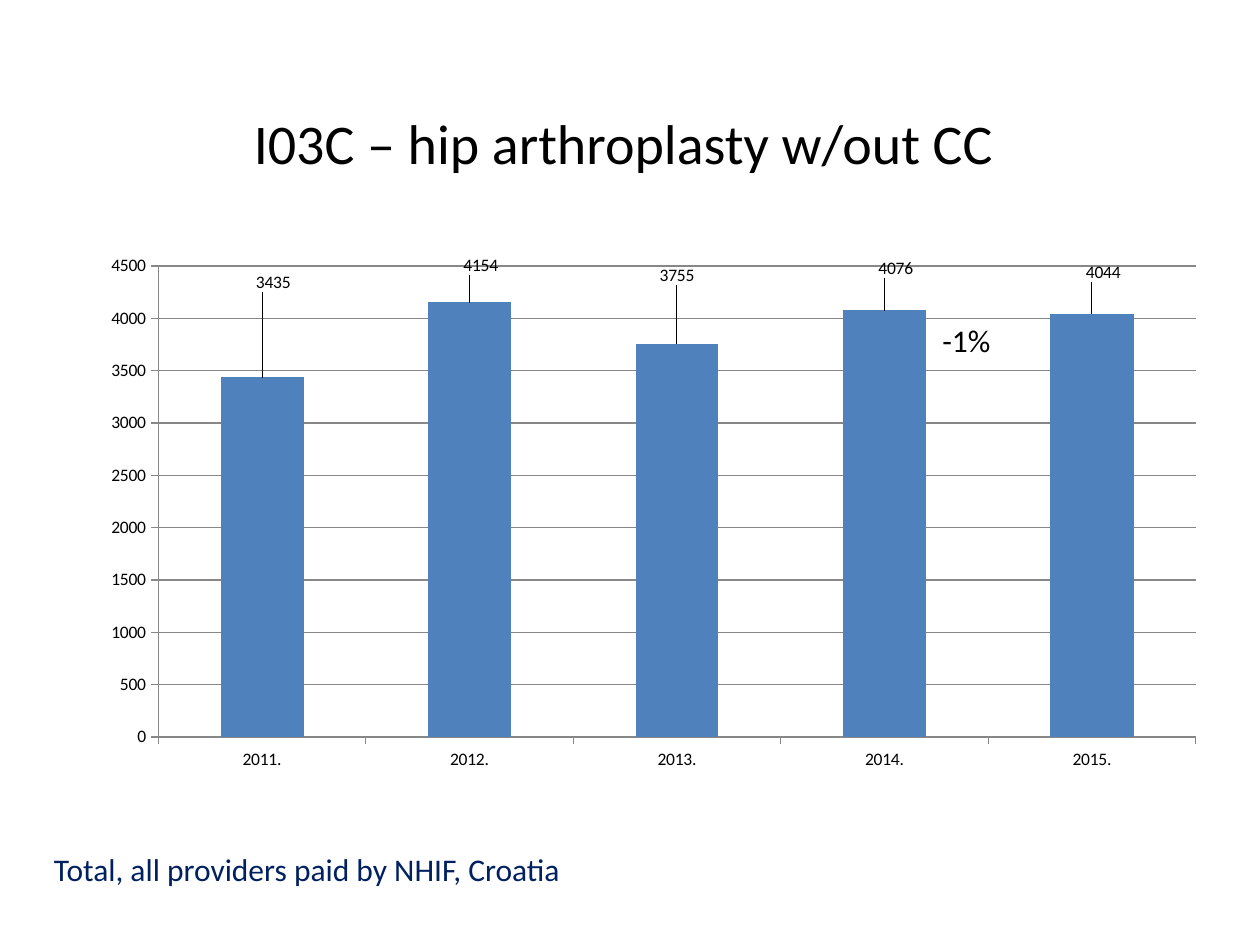
from typing import NamedTuple

from lxml.etree import SubElement
from pptx import Presentation
from pptx.chart.data import CategoryChartData
from pptx.dml.color import RGBColor
from pptx.enum.chart import XL_CHART_TYPE as Kind
from pptx.enum.chart import XL_LABEL_POSITION as Spot
from pptx.enum.chart import XL_TICK_MARK as Tick
from pptx.enum.text import MSO_ANCHOR as Anchor
from pptx.enum.text import PP_ALIGN as Align
from pptx.oxml.ns import qn
from pptx.util import Inches, Pt

BLACK = RGBColor(0x00, 0x00, 0x00)
NAVY = RGBColor(0x00, 0x20, 0x60)
BLUE = RGBColor(0x4F, 0x81, 0xBD)
GREY = RGBColor(0x87, 0x87, 0x87)
FONT = "Calibri"


class Box(NamedTuple):
    left: float
    top: float
    width: float
    height: float

    def place(self) -> list:
        return [Inches(n) for n in self]


class Bar(NamedTuple):
    year: str
    count: int
    dx: float  # label shift, as a share of the chart
    dy: float


BARS = [
    Bar("2011.", 3435, 0.01, -0.15),
    Bar("2012.", 4154, 0.01, -0.04),
    Bar("2013.", 3755, 0.0, -0.1),
    Bar("2014.", 4076, 0.01, -0.05),
    Bar("2015.", 4044, 0.01, -0.05),
]


def add_text(slide, text: str, box: Box, *, size: int = 18,
             color: RGBColor = BLACK, align: Align = Align.LEFT,
             anchor: Anchor = Anchor.TOP) -> None:
    frame = slide.shapes.add_textbox(*box.place()).text_frame
    frame.word_wrap = True
    frame.vertical_anchor = anchor
    para = frame.paragraphs[0]
    para.alignment = align
    run = para.add_run()
    run.text = text
    run.font.name = FONT
    run.font.size = Pt(size)
    run.font.color.rgb = color


def add_layout(parent, index: int, **parts) -> None:
    """Give a chart part a manual layout."""
    for old in parent.findall(qn("c:layout")):
        parent.remove(old)
    layout = SubElement(parent, qn("c:layout"))
    parent.insert(index, layout)
    manual = SubElement(layout, qn("c:manualLayout"))
    for name, value in parts.items():
        SubElement(manual, qn(f"c:{name}")).set("val", str(value))


def style_axis(axis) -> None:
    axis.major_tick_mark = Tick.OUTSIDE
    axis.minor_tick_mark = Tick.NONE
    axis.format.line.color.rgb = GREY
    axis.format.line.width = Pt(0.75)


def add_bars(slide, bars: list[Bar], box: Box) -> None:
    data = CategoryChartData()
    data.categories = [bar.year for bar in bars]
    data.add_series("Series 1", [bar.count for bar in bars])
    chart = slide.shapes.add_chart(
        Kind.COLUMN_CLUSTERED, *box.place(), data).chart
    chart.has_legend = False
    chart.has_title = False
    chart.font.name = FONT
    chart.font.size = Pt(10)
    chart.font.color.rgb = BLACK

    # Axes and grid
    style_axis(chart.category_axis)
    scale = chart.value_axis
    style_axis(scale)
    scale.minimum_scale, scale.maximum_scale = 0, 4500
    scale.major_unit = 500
    scale.has_major_gridlines = True
    grid = scale.major_gridlines.format.line
    grid.color.rgb = GREY
    grid.width = Pt(0.75)

    # Columns and their shifted labels
    plot = chart.plots[0]
    plot.gap_width = 150
    plot.vary_by_categories = False
    series = plot.series[0]
    series.format.fill.solid()
    series.format.fill.fore_color.rgb = BLUE
    series.data_labels.show_value = True
    for i in range(len(bars)):
        series.points[i].data_label.position = Spot.OUTSIDE_END
    for bar, label in zip(bars, series._element.iter(qn("c:dLbl"))):
        add_layout(label, 1, x=bar.dx, y=bar.dy)

    area = chart._chartSpace.find(f".//{qn('c:plotArea')}")
    add_layout(area, 0, layoutTarget="inner", xMode="edge", yMode="edge",
               x=0.062, y=0.038, w=0.918, h=0.884)


def main() -> None:
    deck = Presentation()
    deck.slide_width, deck.slide_height = Inches(10), Inches(7.5)
    slide = deck.slides.add_slide(deck.slide_layouts[6])

    # Title
    add_text(slide, "I03C – hip arthroplasty w/out CC ",
             Box(0.69, 0.4, 8.62, 1.45), size=32,
             align=Align.CENTER, anchor=Anchor.MIDDLE)
    # Chart
    add_bars(slide, BARS, Box(0.7, 1.95, 8.97, 4.23))
    # Change from 2014 to 2015, and the scope of the data
    add_text(slide, "-1%", Box(7.38, 2.5, 0.85, 0.4))
    add_text(slide, "Total, all providers paid by NHIF, Croatia",
             Box(0.33, 6.7, 5.01, 0.4), color=NAVY)

    deck.save("out.pptx")


if __name__ == "__main__":
    main()
